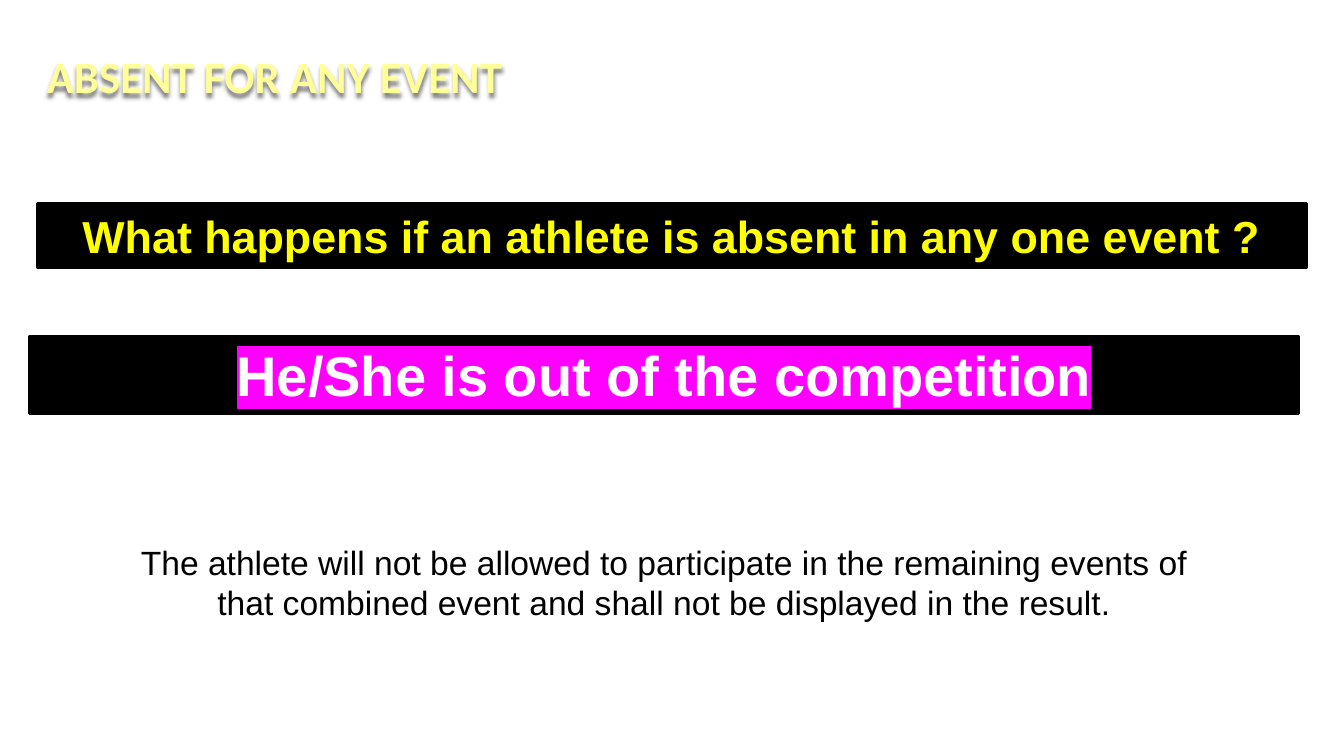
import pptx
import pptx.dml.color
import pptx.enum.shapes
import pptx.enum.text
import pptx.oxml
import pptx.oxml.ns
import pptx.util

colors = {
    "black": "000000",
    "white": "FFFFFF",
    "yellow": "FFFF00",
    "pale_yellow": "FFFF99",
    "magenta": "FF00FF",
}
namespace = pptx.oxml.ns.nsdecls("a")
highlight = f'<a:highlight {namespace}><a:srgbClr val="{colors["magenta"]}"/></a:highlight>'
title_shadow = (
    f'<a:effectLst {namespace}><a:outerShdw blurRad="38100" dist="38100" dir="5400000" algn="t">'
    f'<a:srgbClr val="{colors["black"]}"><a:alpha val="50000"/></a:srgbClr>'
    "</a:outerShdw></a:effectLst>"
)
align = pptx.enum.text.PP_ALIGN


def rgb(name):
    return pptx.dml.color.RGBColor.from_string(colors[name])


# Blank slide
presentation = pptx.Presentation()
presentation.slide_width = pptx.util.Inches(13.33)
presentation.slide_height = pptx.util.Inches(7.5)
slide = presentation.slides.add_slide(presentation.slide_layouts[6])

# Boxes: left, top, width and height in percent of the slide
boxes = [
    {
        "text": "What happens if an athlete is absent in any one event ?",
        "place": (2.78, 26.93, 94.45, 8.53), "banner": True, "align": align.CENTER,
        "color": "yellow", "highlight": False, "shadow": False,
        "font": {"name": "Arial", "size": pptx.util.Pt(32), "bold": True},
    },
    {
        "text": "He/She is out of the competition",
        "place": (2.18, 44.45, 94.45, 10.27), "banner": True, "align": align.CENTER,
        "color": "white", "highlight": True, "shadow": False,
        "font": {"name": "Arial", "size": pptx.util.Pt(40), "bold": True},
    },
    {
        "text": "ABSENT FOR ANY EVENT",
        "place": (2.75, 5.73, 52.6, 8.53), "banner": False, "align": align.LEFT,
        "color": "pale_yellow", "highlight": False, "shadow": True,
        "font": {"name": "Calibri", "size": pptx.util.Pt(32), "bold": True},
    },
    {
        "text": "The athlete will not be allowed to participate in the remaining events of "
                "that combined event and shall not be displayed in the result.",
        "place": (8.93, 70.98, 80.93, 12.13), "banner": False, "align": align.CENTER,
        "color": "black", "highlight": False, "shadow": False,
        "font": {"name": "Arial", "size": pptx.util.Pt(24), "bold": False},
    },
]

for box in boxes:
    left, top, width, height = box["place"]
    frame = (
        int(presentation.slide_width * left / 100),
        int(presentation.slide_height * top / 100),
        int(presentation.slide_width * width / 100),
        int(presentation.slide_height * height / 100),
    )

    # Black banner or plain text box
    if box["banner"]:
        shape = slide.shapes.add_shape(pptx.enum.shapes.MSO_SHAPE.RECTANGLE, *frame)
        shape.shadow.inherit = False
        shape.fill.solid()
        shape.fill.fore_color.rgb = rgb("black")
        shape.line.color.rgb = rgb("black")
        shape.line.width = pptx.util.Pt(2)
    else:
        shape = slide.shapes.add_textbox(*frame)

    # Shadow of an unfilled box falls from its letters
    if box["shadow"]:
        shape._element.spPr.append(pptx.oxml.parse_xml(title_shadow))

    # Text
    text_frame = shape.text_frame
    text_frame.word_wrap = True
    text_frame.auto_size = pptx.enum.text.MSO_AUTO_SIZE.SHAPE_TO_FIT_TEXT
    text_frame.vertical_anchor = pptx.enum.text.MSO_ANCHOR.TOP
    paragraph = text_frame.paragraphs[0]
    paragraph.alignment = box["align"]
    run = paragraph.add_run()
    run.text = box["text"]
    for attribute, value in box["font"].items():
        setattr(run.font, attribute, value)
    run.font.color.rgb = rgb(box["color"])

    # Highlight follows the text fill
    if box["highlight"]:
        text_fill = run._r.get_or_add_rPr().find(pptx.oxml.ns.qn("a:solidFill"))
        text_fill.addnext(pptx.oxml.parse_xml(highlight))

presentation.save("out.pptx")
